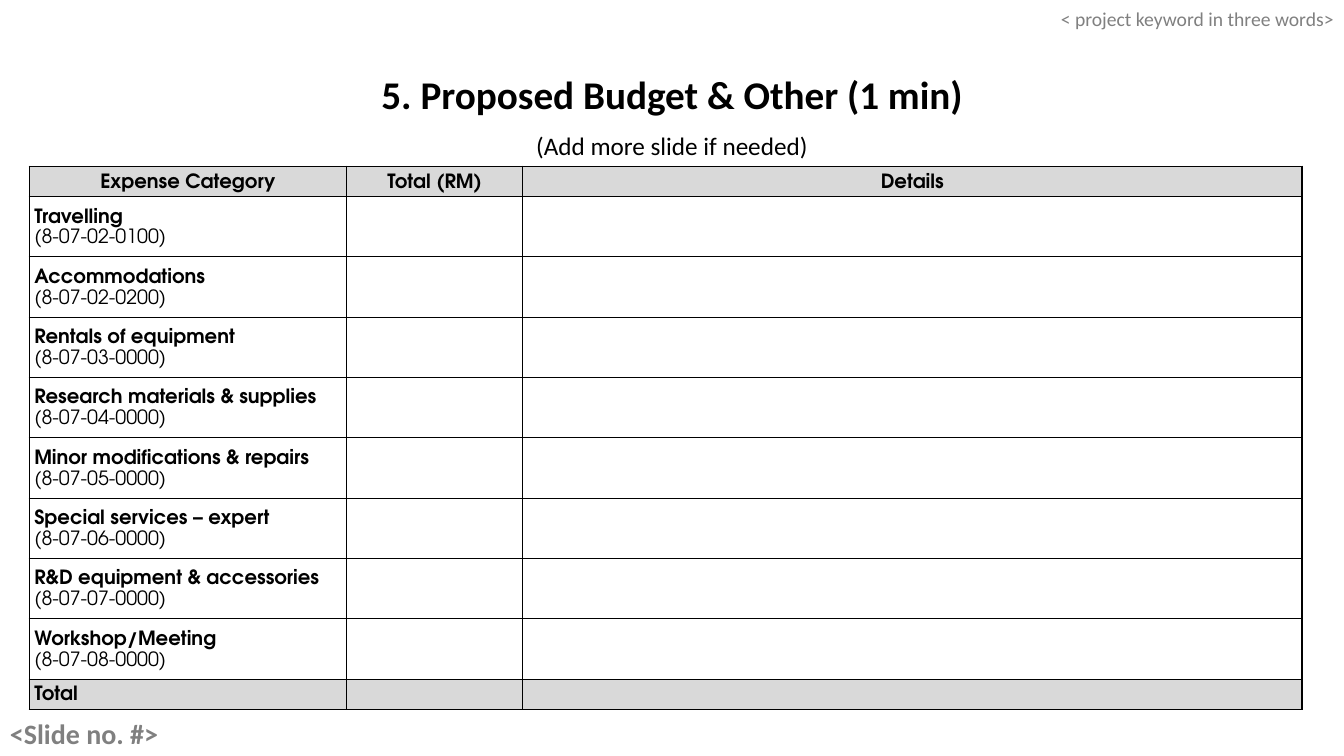
"""Build the proposed budget slide with its expense table."""
from lxml.etree import SubElement
from pptx import Presentation
from pptx.dml.color import RGBColor
from pptx.enum.text import MSO_ANCHOR as ANCHOR, MSO_AUTO_SIZE as AUTO, PP_ALIGN as ALIGN
from pptx.oxml.ns import qn
from pptx.util import Pt

BLACK = RGBColor(0x00, 0x00, 0x00)
GREY = RGBColor(0x80, 0x80, 0x80)
BAND = RGBColor(0xD9, 0xD9, 0xD9)
TEXT_FONT = "Calibri"
TABLE_FONT = "TeX Gyre Adventor"

HEADINGS = ["Expense Category", "Total (RM)", "Details"]
EXPENSES = [
    ("Travelling", "(8-07-02-0100)"),
    ("Accommodations", "(8-07-02-0200)"),
    ("Rentals of equipment", "(8-07-03-0000)"),
    ("Research materials & supplies", " (8-07-04-0000)"),
    ("Minor modifications & repairs", "(8-07-05-0000)"),
    ("Special services – expert", "(8-07-06-0000)"),
    ("R&D equipment & accessories", " (8-07-07-0000)"),
    ("Workshop/Meeting", "(8-07-08-0000)"),
]
COLUMN_WIDTHS = [226.8, 125.6, 556.8]
BAND_HEIGHT, EXPENSE_HEIGHT = 21.6, 43.1


def add_run(p, text, size, font=TEXT_FONT, color=BLACK, bold=False):
    r = p.add_run()
    r.text = text
    r.font.size = Pt(size)
    r.font.name = font
    r.font.bold = bold
    r.font.color.rgb = color


def format_frame(tf):
    tf.word_wrap = True
    tf.auto_size = AUTO.NONE
    tf.vertical_anchor = ANCHOR.TOP
    tf.margin_left = tf.margin_right = Pt(7.2)
    tf.margin_top = tf.margin_bottom = Pt(3.6)


def format_paragraph(p, align):
    p.alignment = align
    p.line_spacing = 1.07
    p.space_before = Pt(0)
    p.space_after = Pt(8)


def fill_title(sp):
    sp.left, sp.top, sp.width, sp.height = Pt(0), Pt(43.9), Pt(960), Pt(74.9)
    tf = sp.text_frame
    format_frame(tf)
    heading, hint = tf.paragraphs[0], tf.add_paragraph()
    for p in (heading, hint):
        format_paragraph(p, ALIGN.CENTER)
    add_run(heading, "5. Proposed Budget & Other (1 min)", 28, bold=True)
    add_run(hint, "(Add more slide if needed)", 18)


def add_label(s, box, text, size, align, bold=False):
    tf = s.shapes.add_textbox(*map(Pt, box)).text_frame
    format_frame(tf)
    format_paragraph(tf.paragraphs[0], align)
    add_run(tf.paragraphs[0], text, size, color=GREY, bold=bold)


def format_cell(cell, shaded):
    cell.vertical_anchor = ANCHOR.MIDDLE
    cell.margin_left = cell.margin_right = Pt(3.6)
    cell.margin_top = cell.margin_bottom = Pt(0)
    tc_pr = cell._tc.get_or_add_tcPr()
    for side in ("lnL", "lnR", "lnT", "lnB"):
        line = SubElement(tc_pr, qn(f"a:{side}"), w=str(Pt(1)))
        solid = SubElement(line, qn("a:solidFill"))
        SubElement(solid, qn("a:srgbClr"), val=str(BLACK))
    if shaded:
        cell.fill.solid()
        cell.fill.fore_color.rgb = BAND
    else:
        cell.fill.background()
    end = cell.text_frame.paragraphs[0]._p.get_or_add_endParaRPr()
    end.set("sz", "1400")


def write_cell(cell, name, code="", align=ALIGN.LEFT):
    tf = cell.text_frame
    p = tf.paragraphs[0]
    add_run(p, name, 14, TABLE_FONT, bold=True)
    if code:
        code_p = p if code.startswith(" ") else tf.add_paragraph()
        add_run(code_p, code, 14, TABLE_FONT)
    for p in tf.paragraphs:
        p.alignment = align
        p.line_spacing = 1.15


def add_budget_table(s):
    heights = [BAND_HEIGHT, *[EXPENSE_HEIGHT] * len(EXPENSES), BAND_HEIGHT]
    table = s.shapes.add_table(
        len(heights), len(COLUMN_WIDTHS), Pt(20.9), Pt(118.8),
        Pt(sum(COLUMN_WIDTHS)), Pt(sum(heights))).table
    table.first_row = table.horz_banding = False
    for column, width in zip(table.columns, COLUMN_WIDTHS):
        column.width = Pt(width)
    last = len(heights) - 1
    for i, (row, height) in enumerate(zip(table.rows, heights)):
        row.height = Pt(height)
        for cell in row.cells:
            format_cell(cell, i in (0, last))
    for j, heading in enumerate(HEADINGS):
        write_cell(table.cell(0, j), heading, align=ALIGN.CENTER)
    for i, (name, code) in enumerate(EXPENSES, 1):
        write_cell(table.cell(i, 0), name, code)
    write_cell(table.cell(last, 0), "Total")


def main():
    prs = Presentation()
    prs.slide_width, prs.slide_height = Pt(960), Pt(540)
    s = prs.slides.add_slide(prs.slide_layouts[5])
    fill_title(s.shapes.title)
    add_label(s, (0, 506.9, 176.4, 33.1), "<Slide no. #>", 20, ALIGN.LEFT, bold=True)
    add_budget_table(s)
    add_label(s, (353.5, 0, 606.5, 25.2), "< project keyword in three words>", 14, ALIGN.RIGHT)
    prs.save("out.pptx")


if __name__ == "__main__":
    main()
